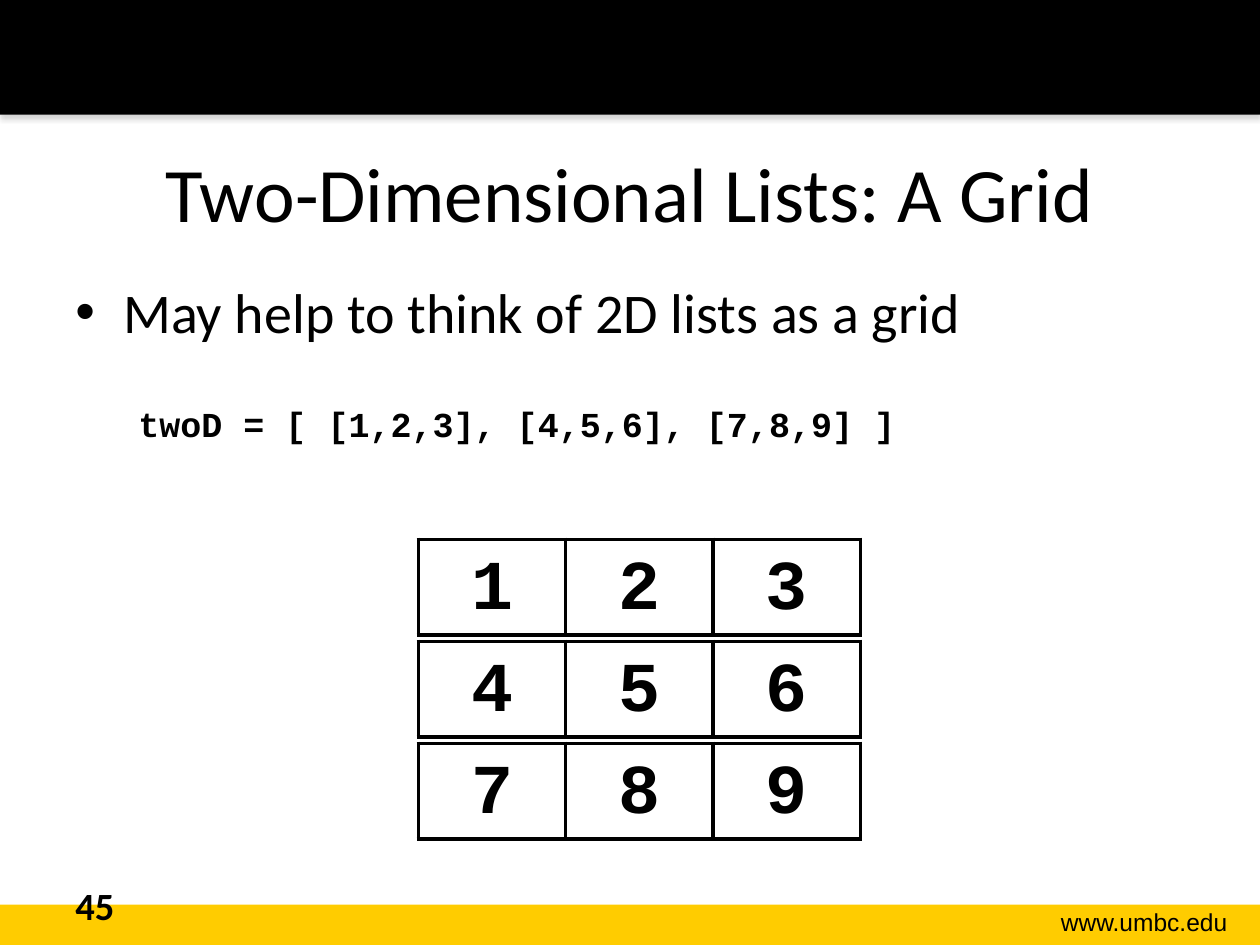
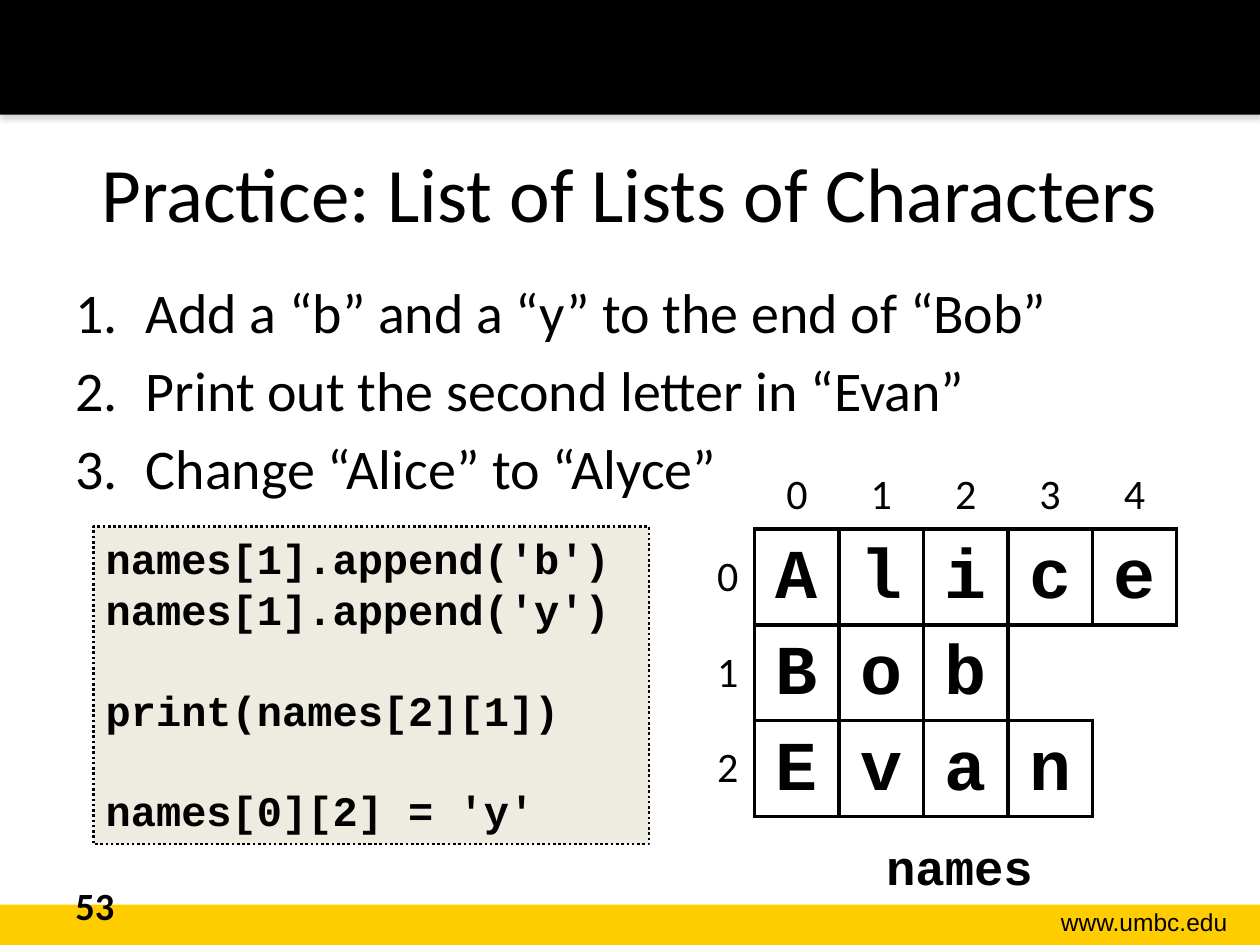
import pptx
import pptx.dml.color
import pptx.enum.dml
import pptx.enum.shapes
import pptx.enum.text
import pptx.oxml
import pptx.oxml.ns
import pptx.util
from lxml import etree

Inches = pptx.util.Inches
Pt = pptx.util.Pt
RGBColor = pptx.dml.color.RGBColor
Align = pptx.enum.text.PP_ALIGN
Anchor = pptx.enum.text.MSO_ANCHOR
qn = pptx.oxml.ns.qn

BLACK = RGBColor(0x00, 0x00, 0x00)
WHITE = RGBColor(0xFF, 0xFF, 0xFF)
GOLD = RGBColor(0xFF, 0xCC, 0x00)
CODE_FILL = RGBColor(0xEE, 0xEC, 0xE1)
SANS, MONO = "Calibri", "Courier New"

NO_TABLE_STYLE = "{2D5ABB26-0587-4C30-8999-92F81FD0307C}"
LABEL_ROW, BOX_ROW = 0.53, 0.76
SIDES = {"L": (0, -1), "R": (0, 1), "T": (-1, 0), "B": (1, 0)}
BORDER = 2.25


def add_run(p, text, size, font=SANS, bold=False):
    r = p.add_run()
    r.text = text
    r.font.size = Pt(size)
    r.font.name = font
    r.font.bold = bold
    r.font.color.rgb = BLACK


def add_text_box(s, left, top, width, height, anchor=Anchor.TOP):
    box = s.shapes.add_textbox(Inches(left), Inches(top), Inches(width), Inches(height))
    tf = box.text_frame
    tf.word_wrap = True
    tf.vertical_anchor = anchor
    return tf


def add_label(s, area, text, size, font=SANS, bold=False,
              align=Align.LEFT, anchor=Anchor.TOP):
    p = add_text_box(s, *area, anchor).paragraphs[0]
    p.alignment = align
    add_run(p, text, size, font, bold)


def add_rect(s, left, top, width, height, fill):
    sp = s.shapes.add_shape(pptx.enum.shapes.MSO_SHAPE.RECTANGLE, Inches(left),
                            Inches(top), Inches(width), Inches(height))
    sp.shadow.inherit = False
    sp.fill.solid()
    sp.fill.fore_color.rgb = fill
    sp.line.fill.background()
    return sp


def add_drop_shadow(sp):
    effects = sp._element.spPr.find(qn("a:effectLst"))
    shadow = etree.SubElement(effects, qn("a:outerShdw"), blurRad=str(Pt(3.1)),
                              dist=str(Pt(1.8)), dir="5400000", rotWithShape="0")
    color = etree.SubElement(shadow, qn("a:srgbClr"), val="808080")
    etree.SubElement(color, qn("a:alpha"), val="35000")


def add_slide(prs, title, number):
    """Add a slide with the bands, footer, title and number all slides share."""
    s = prs.slides.add_slide(prs.slide_layouts[6])
    add_rect(s, 0, 7.18, 10, 0.32, GOLD)
    add_drop_shadow(add_rect(s, 0, 0, 10, 0.91, BLACK))
    add_label(s, (7.85, 7.15, 1.99, 0.34), "www.umbc.edu", 14, "Arial", align=Align.RIGHT)
    add_label(s, (0.5, 0.9, 9, 1.25), title, 44, align=Align.CENTER, anchor=Anchor.MIDDLE)
    add_label(s, (0.5, 6.95, 2.33, 0.4), str(number), 22, bold=True)
    return s


def set_indent(p, left, hanging=0):
    pPr = p._p.get_or_add_pPr()
    pPr.set("marL", str(Inches(left)))
    pPr.set("indent", str(-Inches(hanging)))
    return pPr


def add_body(s, items, indent, numbered=False):
    """Add the body text as a bulleted or numbered list."""
    tf = add_text_box(s, 0.5, 2.15, 9, 4.55)
    for i, item in enumerate(items):
        p = tf.add_paragraph() if i else tf.paragraphs[0]
        pPr = set_indent(p, indent, indent)
        etree.SubElement(pPr, qn("a:buFont"), typeface="Calibri" if numbered else "Arial")
        if numbered:
            etree.SubElement(pPr, qn("a:buAutoNum"), type="arabicPeriod")
        else:
            etree.SubElement(pPr, qn("a:buChar"), char="•")
        if i:
            p.space_before = Pt(6.4)
        add_run(p, item, 32)
    return tf


def add_code_box(s, area, groups, size=24):
    """Add a dotted box of code; a line of space separates the groups."""
    sp = add_rect(s, *area, CODE_FILL)
    sp.line.color.rgb = BLACK
    sp.line.width = Pt(1.5)
    sp.line.dash_style = pptx.enum.dml.MSO_LINE.ROUND_DOT
    tf = sp.text_frame
    tf.word_wrap = True
    tf.vertical_anchor = Anchor.TOP
    pitch = Pt(1.2 * size)
    p = None
    for group in groups:
        for i, line in enumerate(group):
            new_group = p is not None and i == 0
            p = tf.paragraphs[0] if p is None else tf.add_paragraph()
            p.alignment = Align.LEFT
            p.line_spacing = pitch
            if new_group:
                p.space_before = pitch
            add_run(p, line, size, MONO, True)


def set_border(cell, side, drawn):
    ln = etree.SubElement(cell._tc.get_or_add_tcPr(), qn(f"a:ln{side}"), w=str(Pt(BORDER)))
    if drawn:
        fill = etree.SubElement(ln, qn("a:solidFill"))
        etree.SubElement(fill, qn("a:srgbClr"), val=str(BLACK))
    else:
        etree.SubElement(ln, qn("a:noFill"))


def fill_cell(cell, text, boxed, row_label):
    if not text:
        cell.fill.background()
        return
    cell.fill.solid()
    cell.fill.fore_color.rgb = WHITE
    cell.margin_left = cell.margin_right = Inches(0.13)
    cell.margin_top = Inches(0.05 if boxed else 0.07)
    cell.margin_bottom = Inches(0.04 if boxed else 0.07)
    cell.vertical_anchor = Anchor.MIDDLE if row_label else Anchor.BOTTOM
    p = cell.text_frame.paragraphs[0]
    p.alignment = Align.RIGHT if row_label else Align.CENTER
    if boxed:
        add_run(p, text, 40, MONO, True)
    else:
        add_run(p, text, 24)


def add_grid(s, left, top, col_width, rows, label_rows=0):
    """Add a table whose first column and label rows stay outside the boxes."""
    heights = [LABEL_ROW if i < label_rows else BOX_ROW for i in range(len(rows))]
    n_cols = len(rows[0])
    frame = s.shapes.add_table(len(rows), n_cols, Inches(left), Inches(top),
                               Inches(col_width * n_cols), Inches(sum(heights)))
    table = frame.table
    table.first_row = table.horz_banding = False
    table._tbl.tblPr.find(qn("a:tableStyleId")).text = NO_TABLE_STYLE
    for column in table.columns:
        column.width = Inches(col_width)
    for row, height in zip(table.rows, heights):
        row.height = Inches(height)

    def is_boxed(i, j):
        return label_rows <= i < len(rows) and 0 < j < n_cols and rows[i][j] != ""

    for i, row in enumerate(rows):
        for j, text in enumerate(row):
            cell = table.cell(i, j)
            for side, (di, dj) in SIDES.items():
                set_border(cell, side, is_boxed(i, j) or is_boxed(i + di, j + dj))
            fill_cell(cell, text, is_boxed(i, j), row_label=j == 0)


def build_number_grid(prs):
    s = add_slide(prs, "Two-Dimensional Lists: A Grid", 45)
    tf = add_body(s, ["May help to think of 2D lists as a grid"], 0.38)
    p = tf.add_paragraph()
    set_indent(p, 0.5)
    p.space_before = Pt(33)
    add_run(p, "twoD = [ [1,2,3], [4,5,6], [7,8,9] ]", 20, MONO, True)

    add_grid(s, 2.15, 3.75, 1.17, [[""] * 4, ["", *"123"]], label_rows=1)
    for top, digits in ((5.09, "456"), (5.9, "789")):
        add_grid(s, 2.15, top, 1.17, [["", *digits]])


def build_names_practice(prs):
    s = add_slide(prs, "Practice: List of Lists of Characters", 53)
    add_body(s, ["Add a “b” and a “y” to the end of “Bob”",
                 "Print out the second letter in “Evan”",
                 "Change “Alice” to “Alyce”"], 0.56, numbered=True)
    n_cols = 7
    rows = [["", *"01234", ""]]
    for i, name in enumerate(("Alice", "Bob", "Evan")):
        rows.append([str(i), *name] + [""] * (n_cols - 1 - len(name)))
    add_grid(s, 5.32, 3.66, 0.67, rows, label_rows=1)
    add_code_box(s, (0.74, 4.18, 4.41, 2.52),
                 [["names[1].append('b')", "names[1].append('y')"],
                  ["print(names[2][1])"],
                  ["names[0][2] = 'y'"]])
    add_label(s, (6.57, 6.59, 2.09, 0.57), "names", 28, MONO, True, Align.CENTER)


def main():
    prs = pptx.Presentation()
    prs.slide_width = Inches(10)
    prs.slide_height = Inches(7.5)
    build_number_grid(prs)
    build_names_practice(prs)
    prs.save("out.pptx")


if __name__ == "__main__":
    main()
